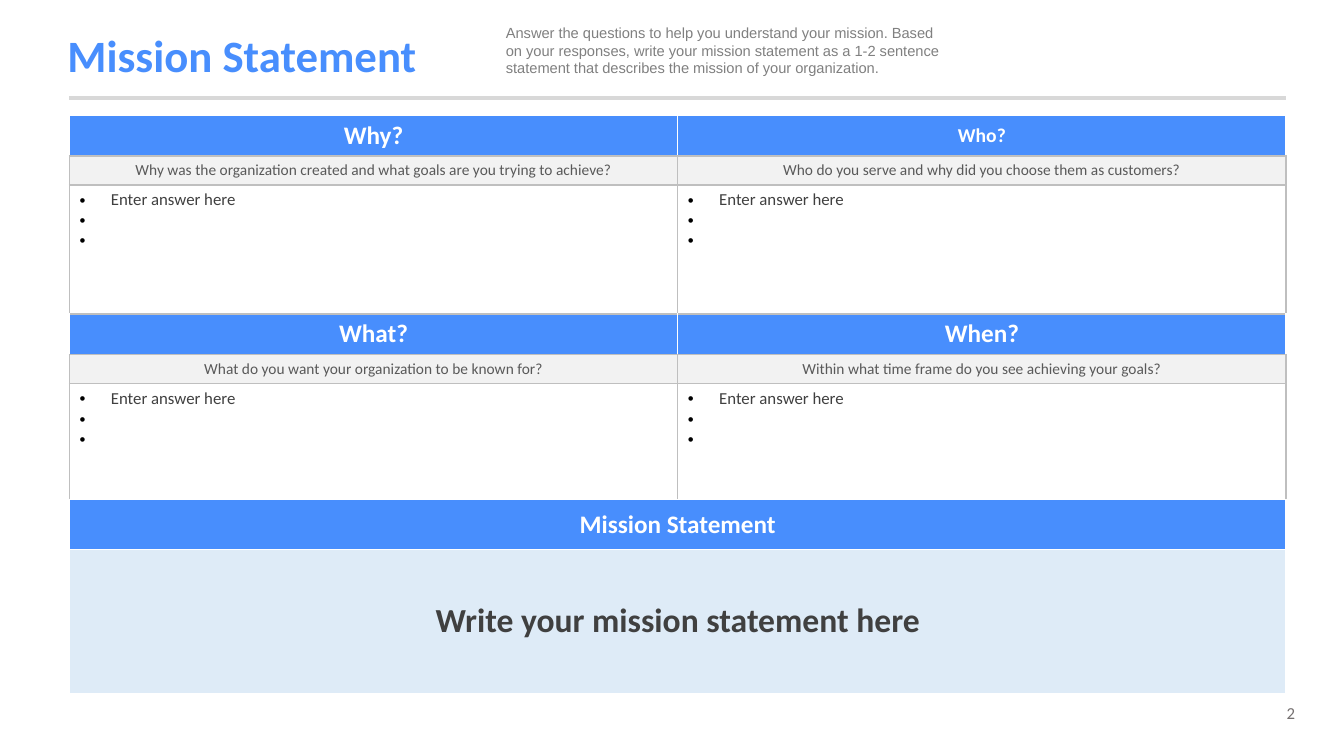
from dataclasses import dataclass

from lxml.etree import SubElement
from pptx import Presentation
from pptx.dml.color import RGBColor
from pptx.enum.shapes import MSO_CONNECTOR
from pptx.enum.text import MSO_ANCHOR, PP_ALIGN
from pptx.oxml.ns import qn
from pptx.util import Cm, Pt


@dataclass(frozen=True)
class Theme:
    heading_font: str = "Calibri"
    note_font: str = "Arial"
    accent: str = "488EFD"
    pale: str = "DEEBF7"
    question_fill: str = "F2F2F2"
    white: str = "FFFFFF"
    black: str = "000000"
    border: str = "BFBFBF"
    rule: str = "D8D8D8"
    note: str = "808080"
    number: str = "757070"
    question: str = "595959"
    answer: str = "404040"
    title_size: float = 32
    statement_size: float = 24
    header_size: float = 18
    small_header_size: float = 14
    answer_size: float = 12
    question_size: float = 11
    note_size: float = 10.5


THEME = Theme()
LEFT, WIDTH = Cm(1.75), Cm(30.66)
HEADER_HEIGHT, QUESTION_HEIGHT = Cm(1.03), Cm(0.73)
ANSWERS = ("Enter answer here", " ", " ")

# Each band: its answer height, then (header, header size, question) per column.
BANDS = (
    (Cm(3.25), (
        ("Why?", THEME.header_size,
         "Why was the organization created and what goals are you trying to achieve?"),
        ("Who?", THEME.small_header_size,
         "Who do you serve and why did you choose them as customers?"),
    )),
    (Cm(2.93), (
        ("What?", THEME.header_size,
         "What do you want your organization to be known for?"),
        ("When?", THEME.header_size,
         "Within what time frame do you see achieving your goals?"),
    )),
)


def add_run(paragraph, text, size, color, bold=False, font=THEME.heading_font):
    run = paragraph.add_run()
    run.text = text
    run.font.size = Pt(size)
    run.font.name = font
    run.font.bold = bold
    run.font.color.rgb = RGBColor.from_string(color)


def add_text(slide, box, text, size, color, bold=False, font=THEME.heading_font,
             align=PP_ALIGN.LEFT, anchor=MSO_ANCHOR.TOP, line_spacing=None):
    frame = slide.shapes.add_textbox(*box).text_frame
    frame.word_wrap = True
    frame.vertical_anchor = anchor
    paragraph = frame.paragraphs[0]
    paragraph.alignment = align
    paragraph.line_spacing = line_spacing
    add_run(paragraph, text, size, color, bold, font)


def add_rule(slide):
    height = Cm(2.46)
    rule = slide.shapes.add_connector(
        MSO_CONNECTOR.STRAIGHT, LEFT, height, LEFT + WIDTH, height)
    rule.line.color.rgb = RGBColor.from_string(THEME.rule)
    rule.line.width = Pt(3)
    SubElement(rule._element.spPr, qn("a:effectLst"))


def add_grid(slide, top, row_heights, column_count):
    frame = slide.shapes.add_table(
        len(row_heights), column_count, LEFT, top, WIDTH, sum(row_heights))
    table = frame.table
    table.first_row = table.horz_banding = False
    for row, height in zip(table.rows, row_heights):
        row.height = height
    return table


def style_cell(cell, fill, sides, top, bottom):
    """Set the fill and the border colours (sides, top, bottom) of a cell."""
    properties = cell._tc.get_or_add_tcPr()
    for edge, color in (("L", sides), ("R", sides), ("T", top), ("B", bottom)):
        line = SubElement(properties, qn(f"a:ln{edge}"), w=str(Pt(1)))
        SubElement(SubElement(line, qn("a:solidFill")), qn("a:srgbClr"), val=color)
    cell.fill.solid()
    cell.fill.fore_color.rgb = RGBColor.from_string(fill)


def write_centred(cell, text, size, color, bold=False):
    cell.vertical_anchor = MSO_ANCHOR.MIDDLE
    paragraph = cell.text_frame.paragraphs[0]
    paragraph.alignment = PP_ALIGN.CENTER
    add_run(paragraph, text, size, color, bold)


def add_bullet(paragraph):
    properties = paragraph._p.get_or_add_pPr()
    indent = Cm(0.79)
    properties.set("marL", str(indent))
    properties.set("indent", str(-indent))
    SubElement(SubElement(properties, qn("a:buClr")), qn("a:srgbClr"), val=THEME.black)
    SubElement(properties, qn("a:buFont"), typeface=THEME.note_font)
    SubElement(properties, qn("a:buChar"), char="•")


def write_answers(cell):
    frame = cell.text_frame
    for index, answer in enumerate(ANSWERS):
        paragraph = frame.add_paragraph() if index else frame.paragraphs[0]
        add_bullet(paragraph)
        add_run(paragraph, answer, THEME.answer_size, THEME.answer)


def add_questions(slide):
    heights = [height for answer_height, _ in BANDS
               for height in (HEADER_HEIGHT, QUESTION_HEIGHT, answer_height)]
    grid = add_grid(slide, Cm(2.9), heights, 2)
    grey = (THEME.border,) * 3
    for band, (_, topics) in enumerate(BANDS):
        for column, (header, header_size, question) in enumerate(topics):
            header_cell, question_cell, answer_cell = (
                grid.cell(3 * band + offset, column) for offset in range(3))
            header_top = THEME.border if band else THEME.white
            style_cell(header_cell, THEME.accent, THEME.white, header_top, THEME.border)
            write_centred(header_cell, header, header_size, THEME.white, bold=True)
            style_cell(question_cell, THEME.question_fill, *grey)
            write_centred(question_cell, question, THEME.question_size, THEME.question)
            style_cell(answer_cell, THEME.white, *grey)
            write_answers(answer_cell)


def add_statement(slide):
    grid = add_grid(slide, Cm(12.58), (Cm(1.27), Cm(3.62)), 1)
    rows = (
        ("Mission Statement", THEME.header_size, THEME.white, THEME.accent),
        ("Write your mission statement here", THEME.statement_size,
         THEME.answer, THEME.pale),
    )
    for index, (text, size, color, fill) in enumerate(rows):
        cell = grid.cell(index, 0)
        style_cell(cell, fill, *(THEME.white,) * 3)
        write_centred(cell, text, size, color, bold=True)


def main():
    presentation = Presentation()
    presentation.slide_width, presentation.slide_height = Cm(33.87), Cm(19.05)
    slide = presentation.slides.add_slide(presentation.slide_layouts[6])
    add_text(slide, (Cm(30.3), Cm(17.58), Cm(2.59), Cm(0.76)), "2",
             THEME.answer_size, THEME.number, align=PP_ALIGN.RIGHT)
    add_rule(slide)
    add_text(slide, (Cm(1.45), Cm(0.48), Cm(27.79), Cm(1.96)), "Mission Statement",
             THEME.title_size, THEME.accent, bold=True,
             anchor=MSO_ANCHOR.MIDDLE, line_spacing=0.9)
    add_text(slide, (Cm(12.5), Cm(0.48), Cm(11.58), Cm(1.6)),
             "Answer the questions to help you understand your mission. "
             "Based on your responses, write your mission statement as a "
             "1-2 sentence statement that describes the mission of your organization.",
             THEME.note_size, THEME.note, font=THEME.note_font)
    add_questions(slide)
    add_statement(slide)
    presentation.save("out.pptx")


if __name__ == "__main__":
    main()
